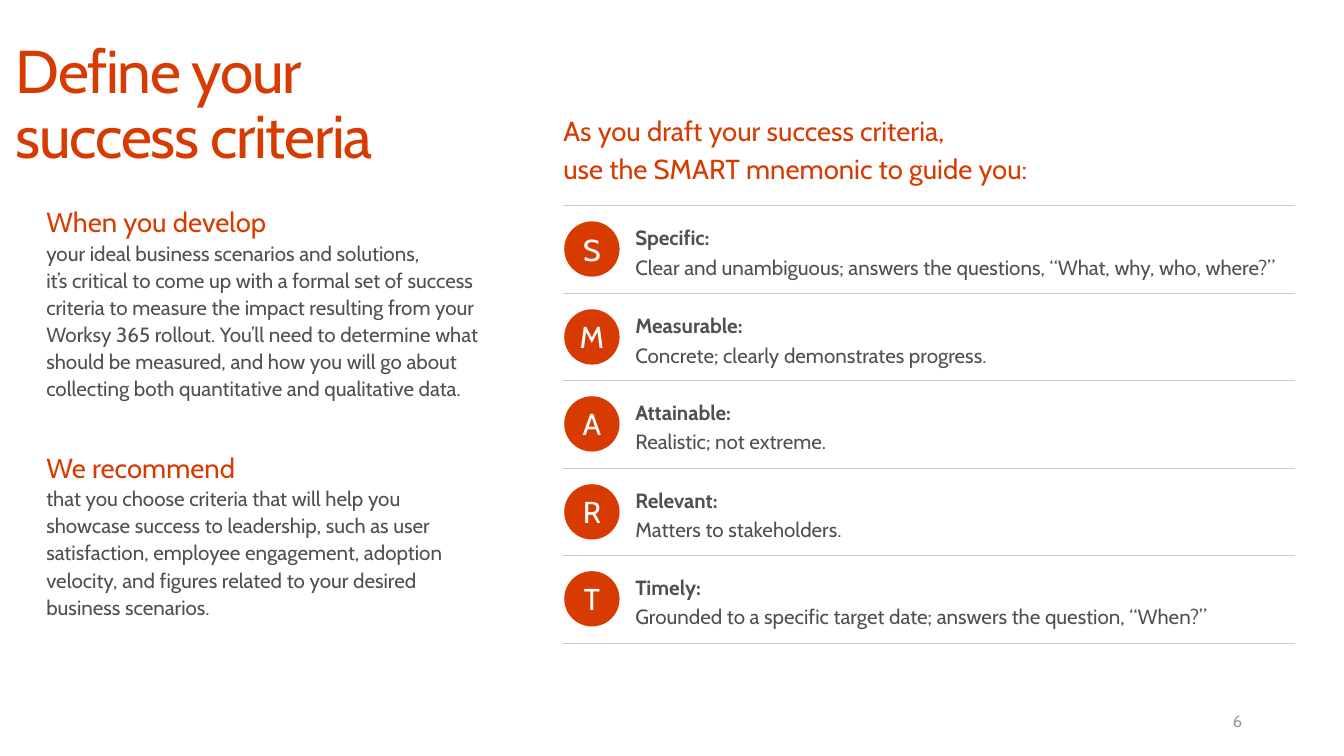
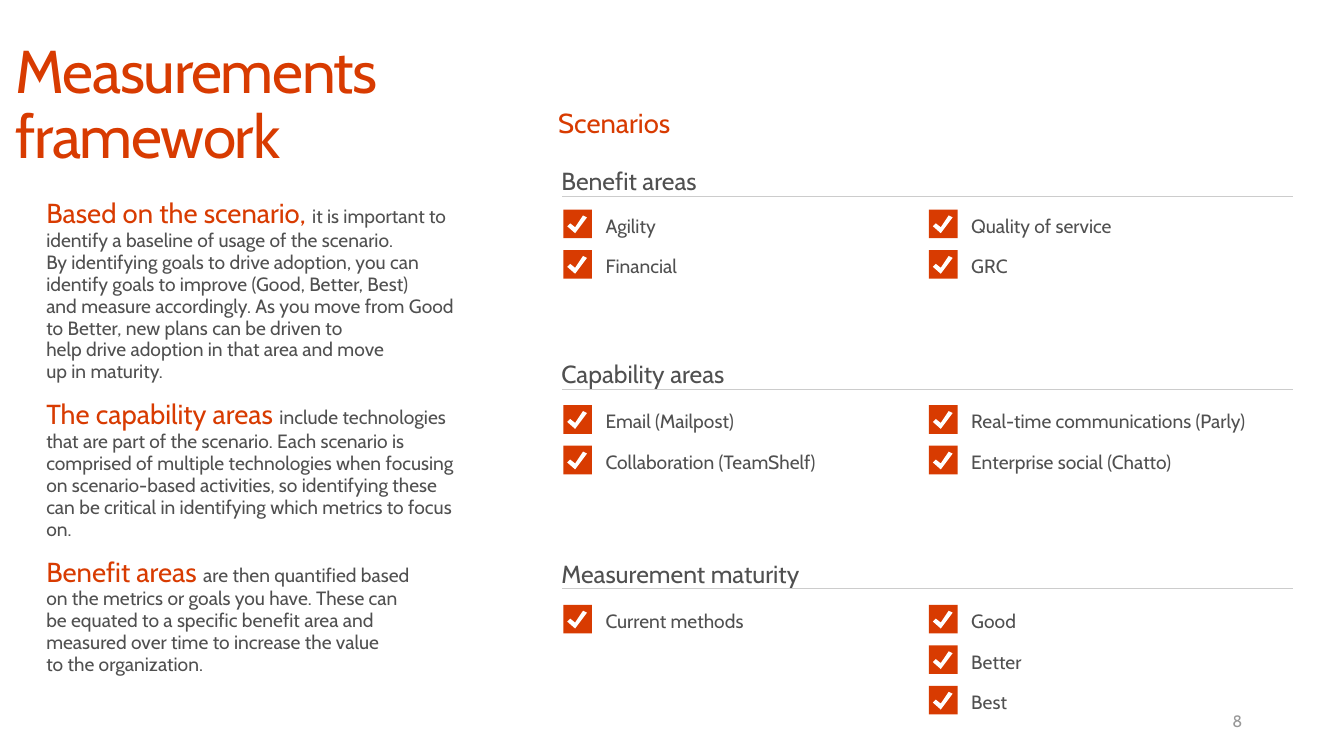
from copy import deepcopy
from dataclasses import dataclass

from lxml import etree
from pptx import Presentation
from pptx.dml.color import RGBColor
from pptx.enum import shapes, text
from pptx.oxml import ns
from pptx.util import Emu, Pt

PX = 9144  # EMU in one px, 100 px to the inch


# Theme and records
@dataclass(frozen=True)
class Theme:
    font: str = "Cabin"
    accent: str = "D83B01"
    ink: str = "505050"
    rule: str = "CCCCCC"
    faint: str = "989898"
    white: str = "FFFFFF"
    title: int = 44
    badge: int = 22
    lead: int = 20
    head: int = 18
    body: int = 15
    small: int = 14
    page: int = 12


T = Theme()


@dataclass(frozen=True)
class Box:
    x: int
    y: int
    w: int
    h: int


@dataclass(frozen=True)
class Span:
    words: str
    size: int
    color: str = T.ink
    bold: bool = False


@dataclass(frozen=True)
class Para:
    spans: tuple[Span, ...]
    line: float = 1.0
    before: float = 0
    after: float = 0
    align: text.PP_ALIGN = text.PP_ALIGN.LEFT


@dataclass(frozen=True)
class Trait:
    name: str
    note: str


@dataclass(frozen=True)
class Area:
    name: str
    rule: int
    first: int
    left: tuple[str, ...]
    right: tuple[str, ...]


# Drawing helpers
def px(n: float) -> Emu:
    return Emu(round(n * PX))


def spot(box: Box) -> tuple[Emu, ...]:
    return tuple(px(n) for n in (box.x, box.y, box.w, box.h))


def style(font, span: Span) -> None:
    font.name = T.font
    font.size = Pt(span.size)
    font.bold = span.bold
    font.color.rgb = RGBColor.from_string(span.color)


def write(para, data: Para) -> None:
    para.alignment = data.align
    para.line_spacing = data.line
    para.space_before = Pt(data.before)
    para.space_after = Pt(data.after)
    for span in data.spans:
        for i, line in enumerate(span.words.split("\n")):
            if i:
                para.add_line_break()
            if line:
                run = para.add_run()
                run.text = line
                style(run.font, span)
    # Breaks take the type size of the run before them
    for gap in para._p.findall(ns.qn("a:br")):
        gap.append(deepcopy(gap.getprevious().find(ns.qn("a:rPr"))))


def fill_text(shape, paras: tuple[Para, ...], inset=(10, 5, 10, 5),
              anchor=text.MSO_ANCHOR.TOP) -> None:
    frame = shape.text_frame
    frame.word_wrap = True
    frame.auto_size = text.MSO_AUTO_SIZE.NONE
    frame.vertical_anchor = anchor
    (frame.margin_left, frame.margin_top,
     frame.margin_right, frame.margin_bottom) = (px(n) for n in inset)
    for i, data in enumerate(paras):
        write(frame.add_paragraph() if i else frame.paragraphs[0], data)


def add_text(slide, box: Box, *paras: Para, **kind) -> None:
    fill_text(slide.shapes.add_textbox(*spot(box)), paras, **kind)


def paint(shape, color: str) -> None:
    shape.shadow.inherit = False
    shape.fill.solid()
    shape.fill.fore_color.rgb = RGBColor.from_string(color)
    shape.line.fill.background()


def add_rule(slide, x: int, y: int, w: int) -> None:
    rule = slide.shapes.add_connector(
        shapes.MSO_CONNECTOR.STRAIGHT, px(x), px(y), px(x + w), px(y))
    rule.line.color.rgb = RGBColor.from_string(T.rule)
    rule.line.width = Pt(0.75)
    etree.SubElement(rule._element.spPr, ns.qn("a:effectLst"))


def add_badge(slide, x: int, y: int, letter: str) -> None:
    disc = slide.shapes.add_shape(
        shapes.MSO_SHAPE.OVAL, *spot(Box(x, y, 56, 56)))
    paint(disc, T.accent)
    para = Para((Span(letter, T.badge, T.white),), align=text.PP_ALIGN.CENTER)
    fill_text(disc, (para,), (5, 5, 5, 5), text.MSO_ANCHOR.MIDDLE)


def add_check(slide, x: int, y: int, label: str) -> None:
    add_text(slide, Box(x + 33, y - 5, 367, 38),
             Para((Span(label, T.small),), 1.2))
    tile = slide.shapes.add_shape(
        shapes.MSO_SHAPE.RECTANGLE, *spot(Box(x, y, 29, 29)))
    paint(tile, T.accent)
    tick = slide.shapes.build_freeform(x + 20, y + 6, scale=PX)
    marks = ((12, 18), (7, 14), (4, 17), (12, 24), (24, 8))
    tick.add_line_segments([(x + a, y + b) for a, b in marks], close=True)
    paint(tick.convert_to_shape(), T.white)


def start(deck, title: str, page: int):
    """Add a slide with the shared title and page number."""
    slide = deck.slides.add_slide(deck.slide_layouts[5])
    head = slide.shapes.title
    head.left, head.top, head.width, head.height = spot(Box(0, 32, 490, 153))
    fill_text(head, (Para((Span(title, T.title, T.accent),), 0.9),),
              (16, 10, 16, 10))
    for run in head.text_frame.paragraphs[0].runs:
        run._r.get_or_add_rPr().set("spc", "-100")
    add_text(slide, Box(961, 709, 306, 41),
             Para((Span(str(page), T.page, T.faint),),
                  align=text.PP_ALIGN.RIGHT),
             anchor=text.MSO_ANCHOR.MIDDLE)
    return slide


# Content
TRAITS = (
    Trait("Specific:", "Clear and unambiguous; answers the questions, "
          "“What, why, who, where?”"),
    Trait("Measurable:", "Concrete; clearly demonstrates progress."),
    Trait("Attainable:", "Realistic; not extreme."),
    Trait("Relevant:", "Matters to stakeholders."),
    Trait("Timely:", "Grounded to a specific target date; answers the "
          "question, “When?”"),
)
ADVICE = (
    ("When you develop",
     "your ideal business scenarios and solutions, \nit’s critical to come "
     "up with a formal set of success criteria to measure the impact "
     "resulting from your Worksy 365 rollout. You’ll need to determine what "
     "should be measured, and how you will go about collecting both "
     "quantitative and qualitative data."),
    ("We recommend",
     "that you choose criteria that will help you showcase success to "
     "leadership, such as user satisfaction, employee engagement, adoption "
     "velocity, and figures related to your desired business scenarios."),
)
STORY = (
    ("Based on the scenario, ",
     "it is important to identify a baseline of usage of the scenario. \n"
     "By identifying goals to drive adoption, you can identify goals to "
     "improve (Good, Better, Best) \nand measure accordingly. As you move "
     "from Good to Better, new plans can be driven to \nhelp drive adoption "
     "in that area and move \nup in maturity."),
    ("The capability areas ",
     "include technologies that are part of the scenario. Each scenario is "
     "comprised of multiple technologies when focusing on scenario-based "
     "activities, so identifying these can be critical in identifying which "
     "metrics to focus on."),
    ("Benefit areas ",
     "are then quantified based \non the metrics or goals you have. These "
     "can \nbe equated to a specific benefit area and \nmeasured over time "
     "to increase the value \nto the organization."),
)
AREAS = (
    Area("Benefit areas", 199, 212, ("Agility", "Financial"),
         ("Quality of service", "GRC")),
    Area("Capability areas", 394, 410,
         ("Email (Mailpost)", "Collaboration (TeamShelf)"),
         ("Real-time communications (Parly)", "Enterprise social (Chatto)")),
    Area("Measurement maturity", 596, 612, ("Current methods",),
         ("Good", "Better", "Best")),
)


# Slides
def criteria(deck) -> None:
    slide = start(deck, "Define your success criteria", 6)
    add_text(slide, Box(547, 106, 662, 87),
             Para((Span("As you draft your success criteria, \nuse the SMART "
                        "mnemonic to guide you:", T.lead, T.accent),), 1.14),
             inset=(23, 5, 10, 5))
    top, tall = 208, 443
    ys = [top + round(i * tall / len(TRAITS)) for i in range(len(TRAITS) + 1)]
    for y in ys:
        add_rule(slide, 570, y, 740)
    for y, trait in zip(ys, TRAITS):
        add_badge(slide, 571, y + 16, trait.name[0])
        add_text(slide, Box(633, y + 9, 712, 71),
                 Para((Span(trait.name + " \n", T.body, bold=True),
                       Span(trait.note, T.body)), 1.2),
                 anchor=text.MSO_ANCHOR.MIDDLE)
    paras = []
    for i, (head, body) in enumerate(ADVICE):
        paras += [Para((Span(head, T.lead, T.accent),), 1.2, 28 if i else 0),
                  Para((Span(body, T.body),), 1.1, after=3.4)]
    add_text(slide, Box(37, 196, 459, 466), *paras)


def framework(deck) -> None:
    slide = start(deck, "Measurements framework", 8)
    add_text(slide, Box(37, 196, 443, 498), *(
        Para((Span(head, T.lead, T.accent), Span(body, T.small)),
             0.95, after=12) for head, body in STORY))
    add_text(slide, Box(555, 104, 742, 30),
             Para((Span("Scenarios", T.lead, T.accent),), 1.1),
             inset=(10, 0, 0, 0))
    for area in AREAS:
        add_text(slide, Box(555, area.rule - 34, 753, 34),
                 Para((Span(area.name, T.head),), 1.1), inset=(13, 0, 0, 0))
        add_rule(slide, 569, area.rule, 739)
        for x, labels in ((570, area.left), (940, area.right)):
            for i, label in enumerate(labels):
                add_check(slide, x, area.first + 41 * i, label)


def main() -> None:
    deck = Presentation()
    deck.slide_width, deck.slide_height = px(1360), px(765)
    criteria(deck)
    framework(deck)
    deck.save("out.pptx")


if __name__ == "__main__":
    main()
